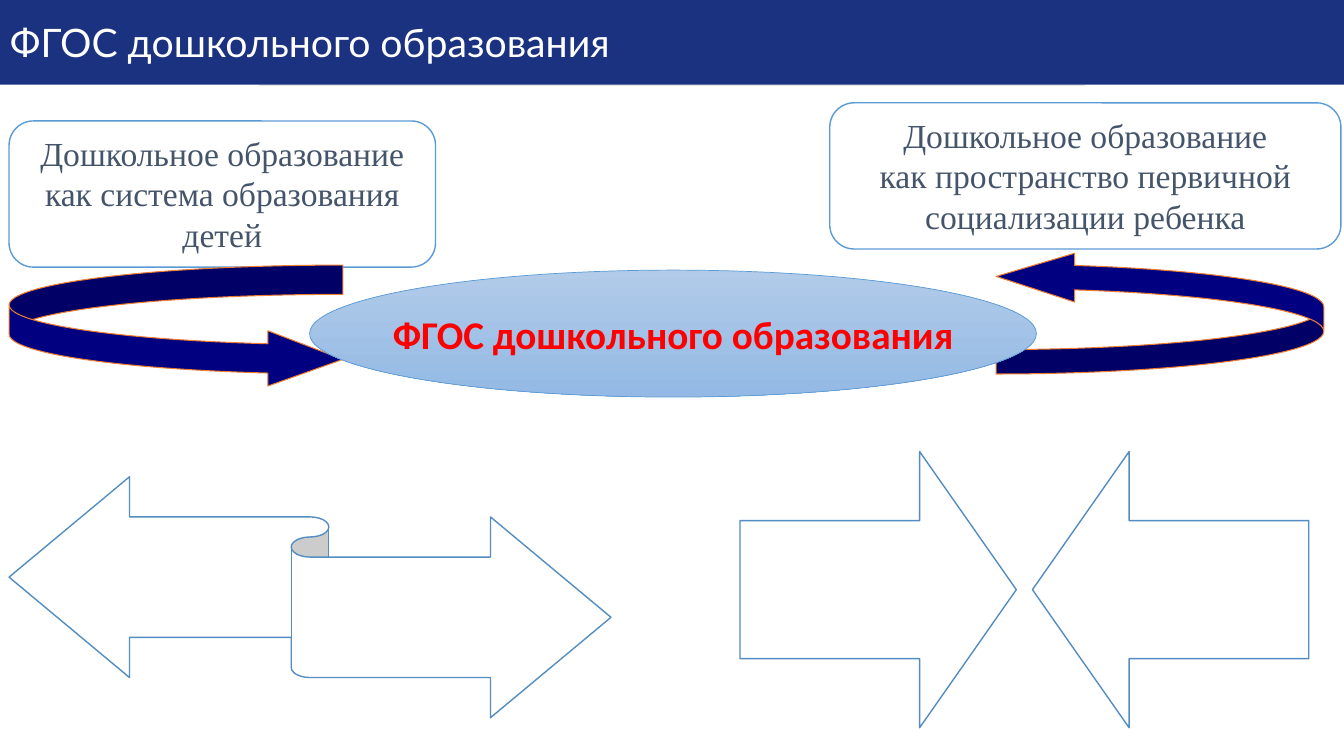
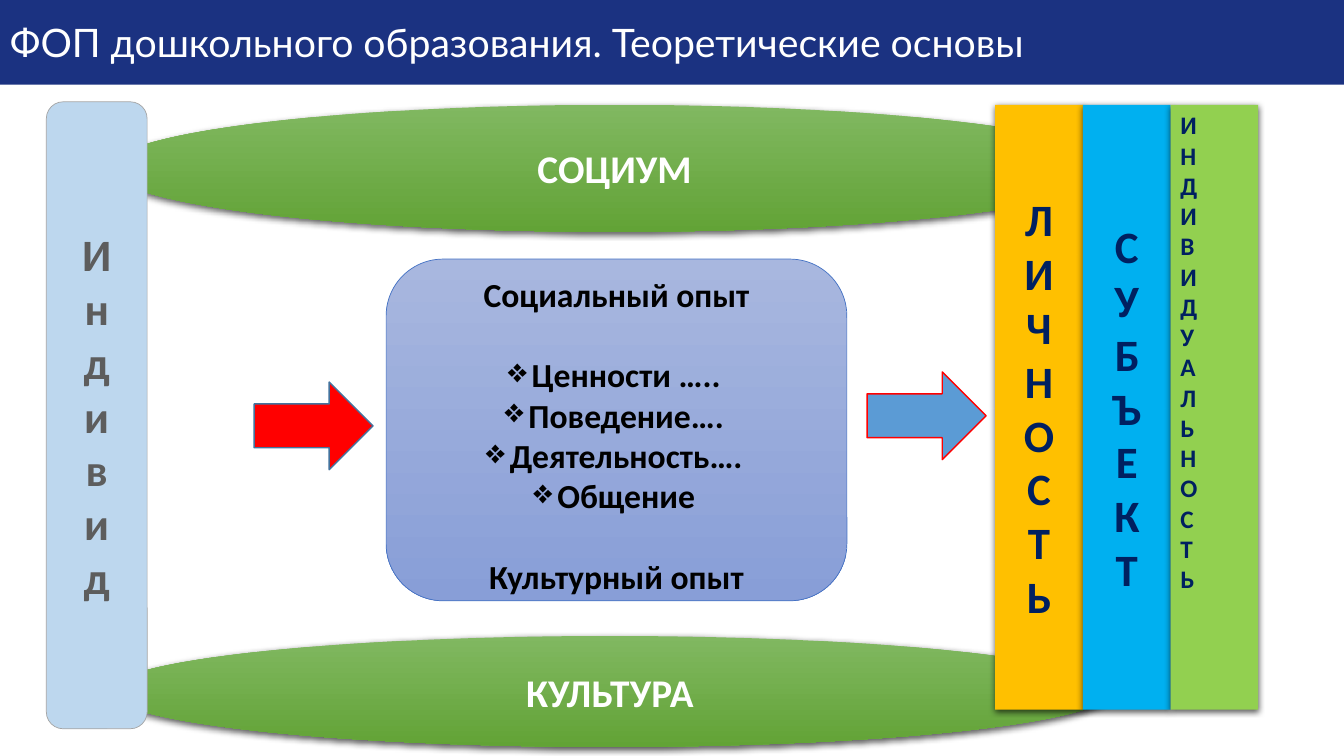
from lxml import etree
from pptx import Presentation
from pptx.dml import color
from pptx.enum import shapes, text
from pptx.oxml import ns
from pptx.util import Inches, Pt

SHAPE = shapes.MSO_SHAPE
WHITE, NAVY_BAND, NAVY_ARROW, NAVY_TEXT = "FFFFFF", "1B3281", "000080", "002060"
SLATE, ORANGE, BLUE, ARROW_BLUE = "44546A", "ED7D31", "5B9BD5", "538DC1"
GREEN_FADE = ("81B861", "62A336")
RED = "FF0000"

STANDARD_TITLE = "ФГОС дошкольного образования"
PROGRAMME_TITLE = "ФОП дошкольного образования. Теоретические основы"

# text lines, left, top, width
VIEWS = [
    (["Дошкольное образование как система образования детей"], 0.09, 1.2, 4.23),
    (["Дошкольное образование", "как пространство первичной социализации ребенка"],
     8.23, 1.02, 5.07),
]
# box, rotation, adjustments
CURVED_ARROWS = [
    ((9.88, 2.5, 3.25, 1.21), 180, (0.2, 0.4, 0.643)),
    ((0.09, 2.63, 3.31, 1.21), 0, (0.24, 0.453, 0.614)),
]
FACING_ARROWS = [(SHAPE.RIGHT_ARROW, 7.34), (SHAPE.LEFT_ARROW, 10.24)]

SURROUNDINGS = [("КУЛЬТУРА", (1.07, 6.31, 9.96, 1.1)), ("СОЦИУМ", (1.07, 1.04, 10.05, 1.26))]
OUTCOMES = [
    ("ЛИЧНОСТЬ", "FFC000", 32, "c"),
    ("СУБЪЕКТ", "00B0F0", 32, "c"),
    ("ИНДИВИДУАЛЬНОСТЬ", "92D050", 18, "l"),
]
OUTCOME_LEFT, OUTCOME_WIDTH = 9.87, 0.87
SOCIAL, CULTURAL = "Социальный опыт", "Культурный опыт"
EXPERIENCE = ["Ценности …..", "Поведение….", "Деятельность….", "Общение"]
STEP_ARROWS = [(2.52, 3.79, RED, "43739E"), (8.6, 3.69, BLUE, RED)]

ALIGN = {"l": text.PP_ALIGN.LEFT, "c": text.PP_ALIGN.CENTER}


def rgb(value):
    return color.RGBColor.from_string(value)


def add_shadow(shape):
    effects = shape._element.spPr.find(ns.qn("a:effectLst"))
    outer = etree.SubElement(effects, ns.qn("a:outerShdw"), blurRad=str(Pt(4.5)),
                             dist=str(Pt(1.5)), dir="5400000", algn="ctr", rotWithShape="0")
    tint = etree.SubElement(outer, ns.qn("a:srgbClr"), val="000000")
    etree.SubElement(tint, ns.qn("a:alpha"), val="63000")


def add_shape(slide, kind, box, fill, line=None, line_width=1, adjustments=(), shadow=False):
    """Fill is one colour, or a pair that fades from top to bottom."""
    shape = slide.shapes.add_shape(kind, *map(Inches, box))
    shape.shadow.inherit = False
    if isinstance(fill, tuple):
        shape.fill.gradient()
        shape.fill.gradient_angle = 270
        for stop, value in zip(shape.fill.gradient_stops, fill):
            stop.color.rgb = rgb(value)
    else:
        shape.fill.solid()
        shape.fill.fore_color.rgb = rgb(fill)
    if line:
        shape.line.color.rgb = rgb(line)
        shape.line.width = Pt(line_width)
    else:
        shape.line.fill.background()
    for index, value in enumerate(adjustments):
        shape.adjustments[index] = value
    if shadow:
        add_shadow(shape)
    return shape


def write(shape, lines, size, colour, font="Calibri", bold=True, align="c",
          anchor=text.MSO_ANCHOR.MIDDLE, wrap=True, stacked=False):
    """Write one paragraph per line and return the paragraphs."""
    frame = shape.text_frame
    frame.word_wrap = wrap
    frame.vertical_anchor = anchor
    if stacked:
        frame._txBody.bodyPr.set("vert", "wordArtVert")
    for index, line in enumerate(lines):
        paragraph = frame.paragraphs[0] if index == 0 else frame.add_paragraph()
        paragraph.alignment = ALIGN[align]
        run = paragraph.add_run()
        run.text = line
        run.font.name = font
        run.font.size = Pt(size)
        run.font.bold = bold
        run.font.color.rgb = rgb(colour)
    return frame.paragraphs


def add_title(slide, title):
    band = add_shape(slide, SHAPE.RECTANGLE, (0, 0, 13.33, 0.84), NAVY_BAND)
    write(band, [title], 28, WHITE, font="Lato", bold=False, align="l")


def add_rule(slide):
    rule = slide.shapes.add_connector(shapes.MSO_CONNECTOR.STRAIGHT, Inches(2.57), Inches(0.84),
                                      Inches(10.76), Inches(0.84))
    rule.line.color.rgb = rgb("E7E6E6")
    rule.line.width = Pt(2)
    etree.SubElement(rule._element.spPr, ns.qn("a:effectLst"))


def build_standard(slide):
    add_rule(slide)
    for lines, left, top, width in VIEWS:
        view = add_shape(slide, SHAPE.FLOWCHART_ALTERNATE_PROCESS, (left, top, width, 1.45),
                         WHITE, BLUE)
        write(view, lines, 24, SLATE, font="Times New Roman", bold=False,
              anchor=text.MSO_ANCHOR.TOP)
    for box, rotation, adjustments in CURVED_ARROWS:
        arrow = add_shape(slide, SHAPE.CURVED_RIGHT_ARROW, box, NAVY_ARROW, ORANGE, 0.75,
                          adjustments)
        arrow.rotation = rotation
    core = add_shape(slide, SHAPE.OVAL, (3.07, 2.68, 7.21, 1.26), ("B1CBE9", "93B9E4"), BLUE, 0.5)
    write(core, [STANDARD_TITLE], 28, RED, wrap=False)
    add_title(slide, STANDARD_TITLE)
    add_shape(slide, SHAPE.LEFT_RIGHT_RIBBON, (0.09, 4.73, 5.97, 2.39), WHITE, ARROW_BLUE)
    for kind, left in FACING_ARROWS:
        add_shape(slide, kind, (left, 4.48, 2.74, 2.74), WHITE, ARROW_BLUE,
                  adjustments=(0.5, 0.35))


def add_experience(slide):
    panel = add_shape(slide, SHAPE.ROUNDED_RECTANGLE, (3.83, 2.57, 4.57, 3.39),
                      ("A8B7DF", "889ED7"), "4472C4", 0.5)
    paragraphs = write(panel, [SOCIAL, *EXPERIENCE, CULTURAL], 24, "000000")
    panel.text_frame.margin_top = Inches(0.15)
    paragraphs[0].space_after = Pt(29)
    paragraphs[-1].space_before = Pt(29)
    for paragraph in paragraphs[1:-1]:
        properties = paragraph._p.get_or_add_pPr()
        etree.SubElement(properties, ns.qn("a:buChar"), char="❖")


def build_programme(slide):
    for label, box in SURROUNDINGS:
        ellipse = add_shape(slide, SHAPE.OVAL, box, GREEN_FADE, shadow=True)
        write(ellipse, [label], 28, WHITE)
    individual = add_shape(slide, SHAPE.ROUNDED_RECTANGLE, (0.46, 1.01, 1, 6.22), "BDD7EE",
                           "A5A5A5", 0.5)
    write(individual, ["Индивид"], 32, "5D5D5D", stacked=True)
    add_experience(slide)
    for index, (label, fill, size, align) in enumerate(OUTCOMES):
        left = OUTCOME_LEFT + index * OUTCOME_WIDTH
        column = add_shape(slide, SHAPE.RECTANGLE, (left, 1.04, OUTCOME_WIDTH, 6), fill,
                           shadow=True)
        write(column, [label], size, NAVY_TEXT, align=align, stacked=True)
    for left, top, fill, line in STEP_ARROWS:
        add_shape(slide, SHAPE.RIGHT_ARROW, (left, top, 1.18, 0.87), fill, line)
    add_title(slide, PROGRAMME_TITLE)


def main():
    presentation = Presentation()
    presentation.slide_width = Inches(13.33)
    presentation.slide_height = Inches(7.5)
    for build in (build_standard, build_programme):
        build(presentation.slides.add_slide(presentation.slide_layouts[6]))
    presentation.save("out.pptx")


if __name__ == "__main__":
    main()
